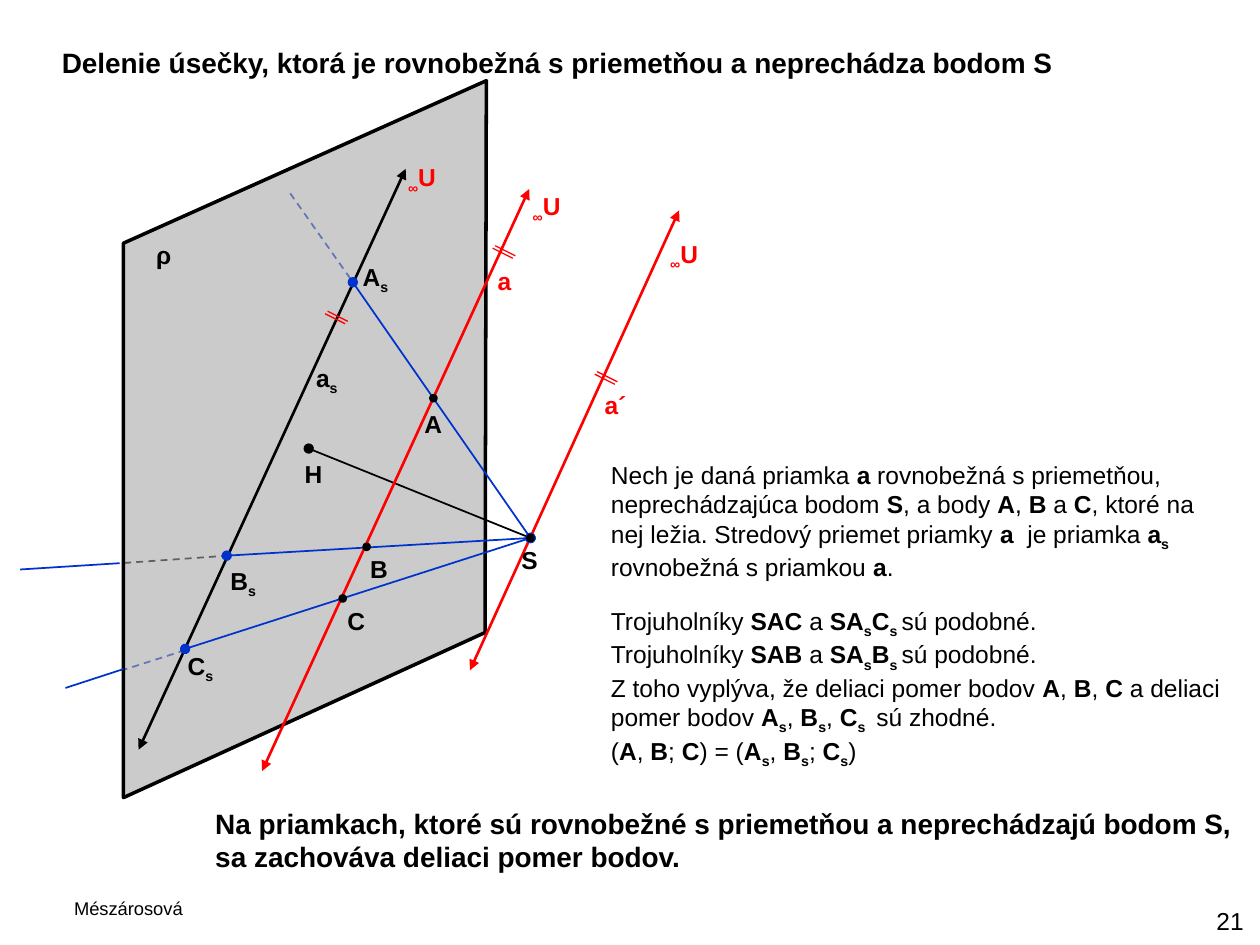
from lxml import etree
from pptx import Presentation
from pptx.dml.color import RGBColor
from pptx.enum import shapes, text
from pptx.oxml.ns import qn
from pptx.util import Inches, Pt

THEME = {
    "font": "Arial", "black": "000000", "red": "FF0000", "blue": "0033CC",
    "plane": "A6A6A6", "plane_alpha": "58000",
    "heading": 16, "body": 14, "footer": 10.5,
    "thin": 0.75, "ray": 1, "line": 1.5, "outline": 2,
}

# Content: * switches bold, _ switches subscript
TITLE = "*Delenie úsečky, ktorá je rovnobežná s priemetňou a neprechádza bodom S*"
CONCLUSION = ("*Na priamkach, ktoré sú rovnobežné s priemetňou a neprechádzajú bodom S, "
              "sa zachováva deliaci pomer bodov.*")
GIVEN = ("Nech je daná priamka *a *rovnobežná s priemetňou, neprechádzajúca bodom *S*, "
         "a body *A*, *B* a *C*, ktoré na nej ležia. Stredový priemet priamky *a * "
         "je priamka *a_s _*rovnobežná s priamkou *a*.")
RESULT = [
    "Trojuholníky *SAC *a *SA_s_C_s _*sú podobné.",
    "Trojuholníky *SAB *a *SA_s_B_s _*sú podobné.",
    "Z toho vyplýva, že deliaci pomer bodov *A*, *B*, *C *a deliaci pomer bodov "
    "*A_s_*, *B_s_*, *C_s _* sú zhodné.",
    "(*A*, *B*; *C*) = (*A_s_*, *B_s_*; *C_s_*)",
]

# Geometry: (start, end, colour, width, ends or dash)
S = (4.21, 4.27)
HIDDEN_RAYS = [
    ((2.78, 2.21), (2.3, 1.53), "blue", "ray", "dash"),
    ((1.47, 5.16), (0.97, 5.32), "blue", "ray", "dash"),
    ((1.81, 4.41), (0.96, 4.47), "black", "ray", "dash"),
    ((0.95, 4.47), (0.16, 4.52), "blue", "ray", None),
]
PLANE = [(0.98, 1.93), (0.98, 6.33), (3.85, 5.02), (3.86, 0.64)]
LINES = [
    ((2.45, 3.56), S, "black", "ray", "oval"),
    ((3.22, 1.34), (1.1, 5.95), "black", "line", "triangle"),
    (S, (2.8, 2.24), "blue", "ray", "oval"),
    ((4.2, 1.5), (2.08, 6.12), "red", "line", "triangle"),
    ((5.39, 1.67), (3.73, 5.32), "red", "line", "triangle"),
    (S, (1.47, 5.15), "blue", "ray", "oval"),
    ((0.98, 5.31), (0.52, 5.46), "blue", "ray", None),
    (S, (1.8, 4.41), "blue", "ray", "oval"),
]
PARALLEL_MARKS = [(3.93, 1.95), (2.6, 2.47), (4.74, 2.95)]
POINTS = [S, (2.91, 4.34), (2.72, 4.75), (3.44, 3.16)]
LABELS = [  # left, top, width, wording, colour
    (1.14, 1.86, 0.31, "ρ", "black"), (2.32, 3.59, 0.34, "H", "black"),
    (2.78, 2.03, 0.47, "A_s_", "black"), (1.73, 4.44, 0.42, "B_s_", "black"),
    (1.39, 5.12, 0.42, "C_s_", "black"), (4.04, 4.28, 0.33, "S", "black"),
    (2.41, 2.83, 0.38, "a_s_", "black"), (3.27, 3.2, 0.34, "A", "black"),
    (2.84, 4.35, 0.34, "B", "black"), (2.66, 4.76, 0.34, "C", "black"),
    (3.85, 2.06, 0.31, "a", "red"), (4.7, 3.05, 0.38, "a´", "red"),
    (5.22, 1.85, 0.44, "_∞_U", "red"), (4.13, 1.47, 0.44, "_∞_U", "red"),
    (3.14, 1.24, 0.44, "_∞_U", "red"),
]


def colour(name):
    return RGBColor.from_string(THEME[name])


def write_runs(paragraph, marked, size, ink):
    bold = lowered = False
    pieces = marked.replace("*", "\n*\n").replace("_", "\n_\n").split("\n")
    for piece in filter(None, pieces):
        if piece == "*":
            bold = not bold
        elif piece == "_":
            lowered = not lowered
        else:
            run = paragraph.add_run()
            run.text = piece
            look = {"name": THEME["font"], "size": Pt(THEME[size]), "bold": bold}
            for key, value in look.items():
                setattr(run.font, key, value)
            run.font.color.rgb = colour(ink)
            if lowered:
                run.font._element.set("baseline", "-25000")


def fill_text(shape, paragraphs, size="body", ink="black", wrap=False,
              align=text.PP_ALIGN.LEFT, anchor=text.MSO_ANCHOR.TOP):
    frame = shape.text_frame
    look = {"word_wrap": wrap, "auto_size": text.MSO_AUTO_SIZE.NONE,
            "vertical_anchor": anchor}
    for key, value in look.items():
        setattr(frame, key, value)
    for i, marked in enumerate(paragraphs):
        paragraph = frame.add_paragraph() if i else frame.paragraphs[0]
        paragraph.alignment = align
        write_runs(paragraph, marked, size, ink)


def add_text(slide, box, paragraphs, **look):
    fill_text(slide.shapes.add_textbox(*map(Inches, box)), paragraphs, **look)


def add_line(slide, start, end, ink, width, style):
    line = slide.shapes.add_connector(
        shapes.MSO_CONNECTOR.STRAIGHT, *map(Inches, start + end))
    line.line.color.rgb = colour(ink)
    line.line.width = Pt(THEME[width])
    ln = line.line._get_or_add_ln()
    if style == "dash":
        etree.SubElement(ln, qn("a:prstDash"), val="dash")
    elif style:
        for tag in ("a:headEnd", "a:tailEnd"):
            etree.SubElement(ln, qn(tag), type=style)
    etree.SubElement(line._element.spPr, qn("a:effectLst"))


def style_solid(shape, fill):
    shape.shadow.inherit = False
    shape.fill.solid()
    shape.fill.fore_color.rgb = colour(fill)
    shape.line.color.rgb = colour("black")
    shape.line.width = Pt(THEME["outline"])


def add_plane(slide):
    corners = [tuple(map(Inches, corner)) for corner in PLANE]
    builder = slide.shapes.build_freeform(*corners[0])
    builder.add_line_segments(corners[1:], close=True)
    plane = builder.convert_to_shape()
    style_solid(plane, "plane")
    tint = plane._element.spPr.find(qn("a:solidFill"))[0]
    etree.SubElement(tint, qn("a:alpha"), val=THEME["plane_alpha"])


def main():
    prs = Presentation()
    prs.slide_width, prs.slide_height = Inches(10), Inches(7.5)
    slide = prs.slides.add_slide(prs.slide_layouts[5])

    # Title
    title = slide.shapes.title
    place = {"left": 0.39, "top": 0.31, "width": 8.17, "height": 0.37}
    for key, value in place.items():
        setattr(title, key, Inches(value))
    fill_text(title, [TITLE], size="heading")

    # Projection plane over the hidden rays, then the visible lines
    for ray in HIDDEN_RAYS:
        add_line(slide, *ray)
    add_plane(slide)
    for line in LINES:
        add_line(slide, *line)

    # Pairs of strokes marking parallel lines
    for x, y in PARALLEL_MARKS:
        for dx, dy in ((0, 0), (-0.02, 0.02)):
            start = (x + dx, y + dy)
            end = (start[0] + 0.16, start[1] + 0.08)
            add_line(slide, start, end, "red", "thin", None)

    # Points and their labels
    dot = 0.04
    for x, y in POINTS:
        point = slide.shapes.add_shape(
            shapes.MSO_SHAPE.OVAL,
            *map(Inches, (x - dot / 2, y - dot / 2, dot, dot)))
        style_solid(point, "black")
    for left, top, width, label, ink in LABELS:
        add_text(slide, (left, top, width, 0.34), [f"*{label}*"], ink=ink)

    # Explanation, conclusion and footer
    add_text(slide, (4.75, 3.6, 5.05, 1.04), [GIVEN], wrap=True)
    add_text(slide, (4.75, 4.76, 5.05, 1.28), RESULT, wrap=True)
    add_text(slide, (1.61, 6.35, 8.39, 0.64), [CONCLUSION], size="heading", wrap=True)
    add_text(slide, (0.49, 7.07, 1.08, 0.28), ["Mészárosová"], size="footer")
    add_text(slide, (9.53, 7.13, 0.44, 0.34), ["21"],
             align=text.PP_ALIGN.RIGHT, anchor=text.MSO_ANCHOR.BOTTOM)

    prs.save("out.pptx")


if __name__ == "__main__":
    main()
